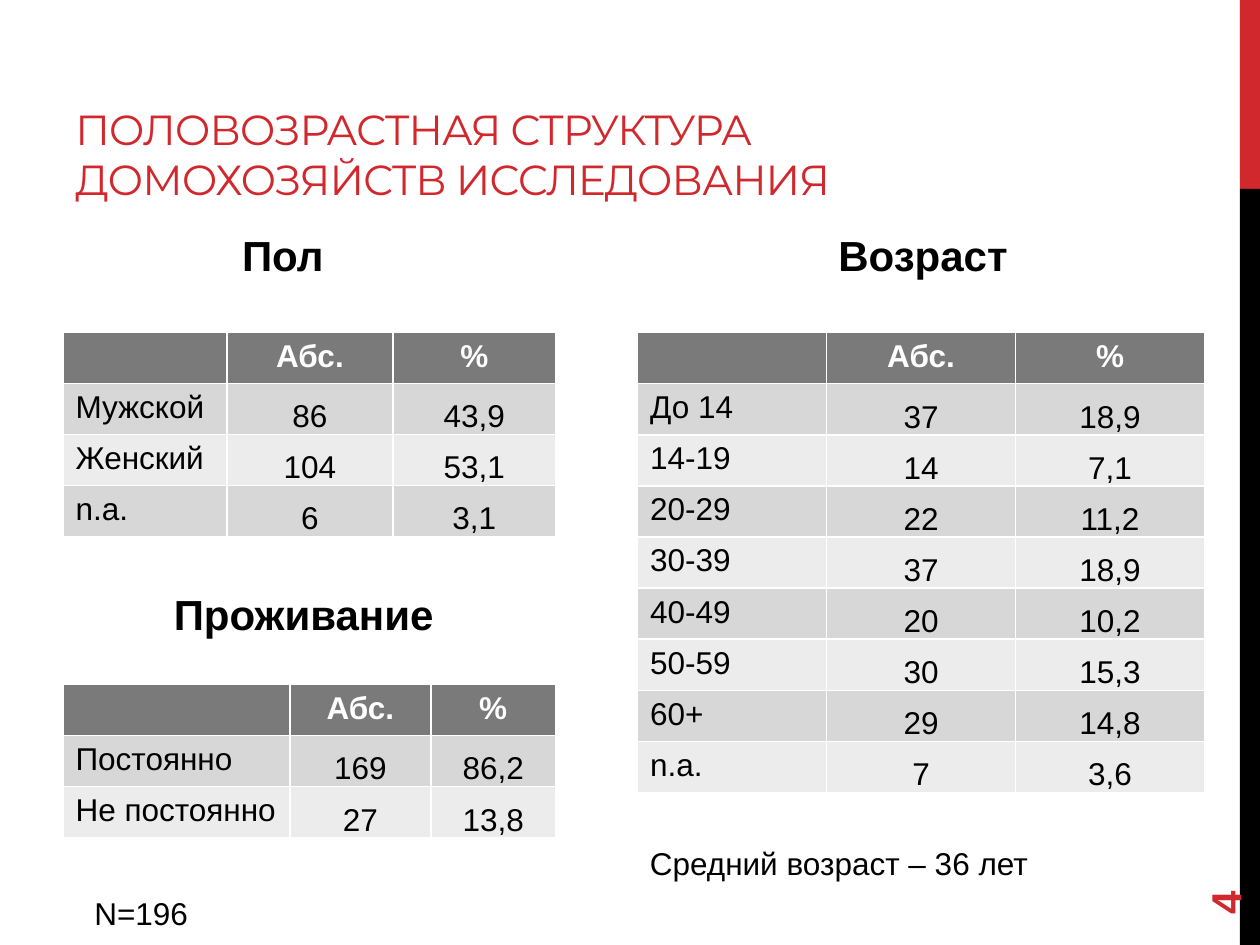
from pptx import Presentation
from pptx.dml.color import RGBColor
from pptx.enum.shapes import MSO_SHAPE
from pptx.enum.text import MSO_ANCHOR, PP_ALIGN
from pptx.util import Inches, Pt

RECTANGLE = MSO_SHAPE.RECTANGLE
LEFT, CENTER = PP_ALIGN.LEFT, PP_ALIGN.CENTER
TOP, MIDDLE, BOTTOM = MSO_ANCHOR.TOP, MSO_ANCHOR.MIDDLE, MSO_ANCHOR.BOTTOM

COLORS = {
    "red": "D1282E",
    "black": "000000",
    "white": "FFFFFF",
    "header": "7A7A7A",
    "odd_row": "D7D7D7",
    "even_row": "ECECEC",
}


def write_text(text_frame, text, size=18, color="black", bold=False,
               font="Arial", align=LEFT, spacing=None):
    paragraph = text_frame.paragraphs[0]
    paragraph.alignment = align
    run = paragraph.add_run()
    run.text = text
    run.font.name = font
    run.font.size = Pt(size)
    run.font.bold = bold
    run.font.color.rgb = RGBColor.from_string(COLORS[color])
    if spacing is not None:
        run.font._element.set("spc", str(spacing))


def add_text(slide, box, text, anchor=TOP, wrap=True, rotation=0, **text_format):
    shape = slide.shapes.add_textbox(*map(Inches, box))
    shape.rotation = rotation
    shape.text_frame.word_wrap = wrap
    shape.text_frame.vertical_anchor = anchor
    write_text(shape.text_frame, text, **text_format)


presentation = Presentation()
presentation.slide_width = Inches(10)
presentation.slide_height = Inches(7.5)
slide = presentation.slides.add_slide(presentation.slide_layouts[6])

# Side stripe
for top, height, color in [(0, 1.5, "red"), (1.5, 6, "black")]:
    shape = slide.shapes.add_shape(
        RECTANGLE, Inches(9.84), Inches(top), Inches(0.16), Inches(height))
    shape.shadow.inherit = False
    shape.fill.solid()
    shape.fill.fore_color.rgb = RGBColor.from_string(COLORS[color])
    shape.line.fill.background()

# Title
add_text(slide, (0.5, 0.17, 6.33, 1.5),
         "ПОЛОВОЗРАСТНАЯ СТРУКТУРА ДОМОХОЗЯЙСТВ ИССЛЕДОВАНИЯ",
         anchor=BOTTOM, size=24, color="red", font="Montserrat", spacing=-60)

# Tables: position, total height, column widths, body rows
tables = [
    (0.5, 2.64, 1.62, (1.3, 1.32, 1.29), [
        ("Мужской", "86", "43,9"),
        ("Женский", "104", "53,1"),
        ("n.a.", "6", "3,1"),
    ]),
    (5.06, 2.64, 3.65, (1.5, 1.5, 1.5), [
        ("До 14", "37", "18,9"),
        ("14-19", "14", "7,1"),
        ("20-29", "22", "11,2"),
        ("30-39", "37", "18,9"),
        ("40-49", "20", "10,2"),
        ("50-59", "30", "15,3"),
        ("60+", "29", "14,8"),
        ("n.a.", "7", "3,6"),
    ]),
    (0.5, 5.43, 1.22, (1.8, 1.12, 0.99), [
        ("Постоянно", "169", "86,2"),
        ("Не постоянно", "27", "13,8"),
    ]),
]
for left, top, height, widths, body in tables:
    rows = [("", "Абс.", "%")] + body
    # The default table style supplies the white grid lines
    table = slide.shapes.add_table(
        len(rows), len(widths), Inches(left), Inches(top),
        Inches(sum(widths)), Inches(height)).table
    for column, width in zip(table.columns, widths):
        column.width = Inches(width)
    for row_index, row in enumerate(rows):
        is_header = row_index == 0
        fill = "header" if is_header else "odd_row" if row_index % 2 else "even_row"
        for column_index, text in enumerate(row):
            cell = table.cell(row_index, column_index)
            cell.fill.solid()
            cell.fill.fore_color.rgb = RGBColor.from_string(COLORS[fill])
            if column_index and not is_header:
                cell.vertical_anchor = BOTTOM
                cell.margin_left = cell.margin_right = cell.margin_top = Inches(0.01)
                cell.margin_bottom = 0
            if text:
                write_text(cell.text_frame, text, bold=is_header,
                           color="white" if is_header else "black",
                           align=CENTER if column_index else LEFT)

# Slide number
add_text(slide, (9, 6.44, 1.44, 0.4), "4", anchor=MIDDLE, rotation=270,
         size=24, color="red", bold=True)

# Table headings
for box, heading in [
    ((1.73, 1.77, 1.03, 0.51), "Пол"),
    ((6.47, 1.77, 1.71, 0.51), "Возраст"),
    ((1.05, 4.62, 2.72, 0.51), "Проживание"),
]:
    add_text(slide, box, heading, size=24, bold=True, align=CENTER)

# Notes under the tables
add_text(slide, (5.06, 6.65, 4.46, 0.4), "Средний возраст – 36 лет")
add_text(slide, (0.65, 7.05, 0.95, 0.4), "N=196", wrap=False)

presentation.save("out.pptx")
